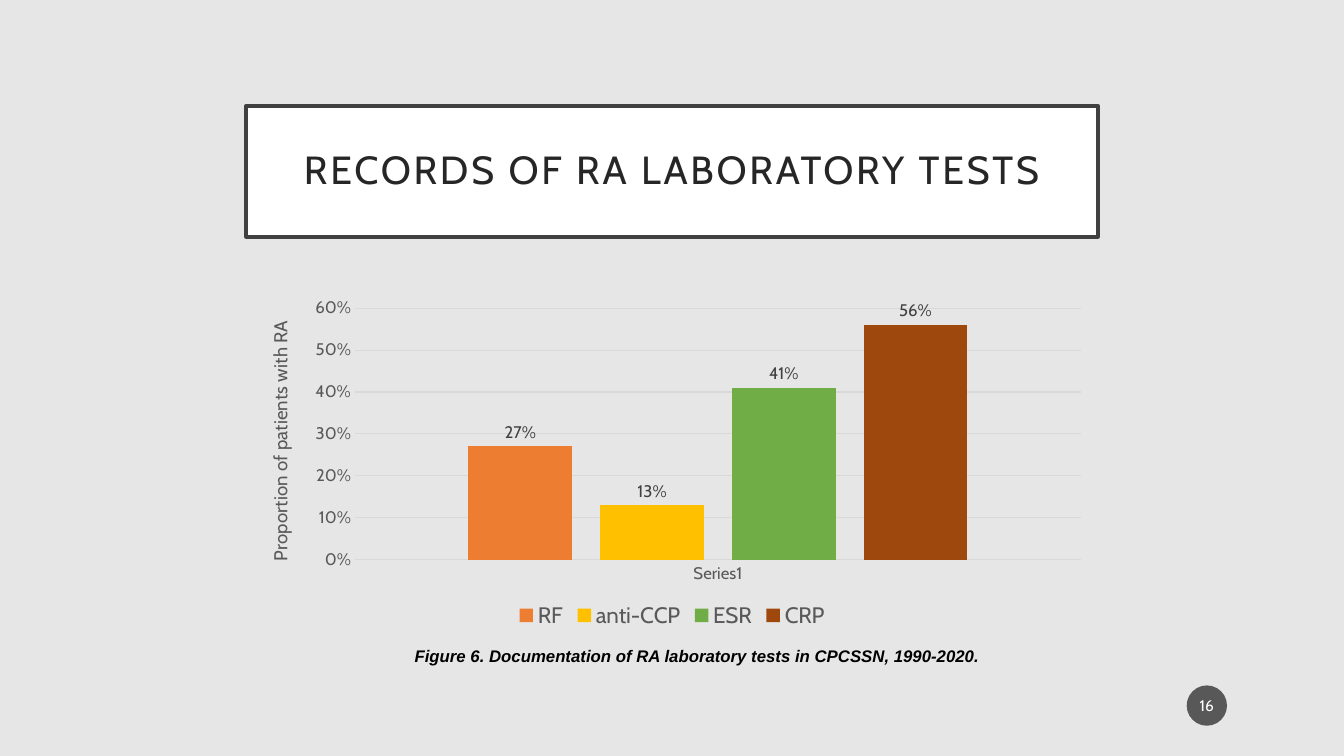
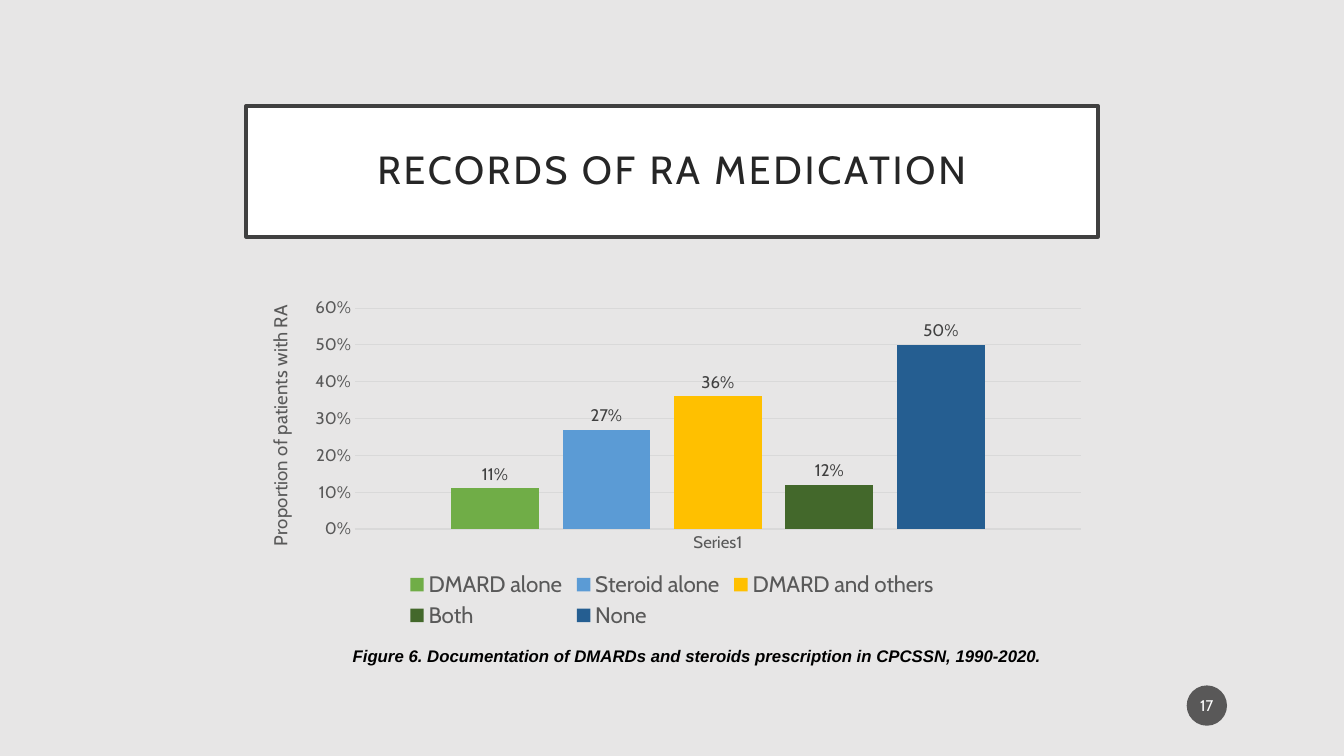
"""Build two slides on recorded laboratory tests and medication for RA."""
from dataclasses import dataclass

from lxml import etree
from pptx import Presentation
from pptx import util as u
from pptx.chart.data import CategoryChartData
from pptx.dml.color import RGBColor
from pptx.enum import chart as ch, shapes, text
from pptx.oxml.ns import qn


@dataclass(frozen=True)
class Theme:
    """Colours, fonts and type sizes shared by the slides."""

    background: str = "E7E6E6"
    white: str = "FFFFFF"
    black: str = "000000"
    frame: str = "404040"
    heading: str = "262626"
    muted: str = "595959"
    rule: str = "D9D9D9"
    badge: str = "1D1D1D"
    orange: str = "ED7D31"
    gold: str = "FFC000"
    green: str = "70AD47"
    brown: str = "9E480E"
    sky: str = "5B9BD5"
    forest: str = "43682B"
    navy: str = "255E91"
    font: str = "Cabin"
    caption_font: str = "Arial"
    title_size: float = 28
    legend_size: float = 16
    axis_title_size: float = 13.3
    small_size: float = 12
    badge_size: float = 11


THEME = Theme()
COLUMN_LEFT, COLUMN_WIDTH = 2.44, 8.45


def rgb(value):
    """Turn a hex string into a colour."""
    return RGBColor.from_string(value)


def place(shape, left, top, width, height):
    """Set the position and size of a shape in inches."""
    shape.left, shape.top = u.Inches(left), u.Inches(top)
    shape.width, shape.height = u.Inches(width), u.Inches(height)


def style_font(font, size, color, name=THEME.font, bold=False, italic=False):
    """Apply one set of type settings to a font."""
    font.name, font.size = name, u.Pt(size)
    font.bold, font.italic = bold, italic
    font.color.rgb = rgb(color)


def write(frame, content, *, line_spacing=None, tracking=0, indent=0,
          anchor=text.MSO_ANCHOR.TOP, insets=(0.1, 0.05), **font_format):
    """Fill a text frame with one centred, formatted paragraph."""
    frame.word_wrap = True
    frame.auto_size = text.MSO_AUTO_SIZE.NONE
    frame.vertical_anchor = anchor
    frame.margin_left = frame.margin_right = u.Inches(insets[0])
    frame.margin_top = frame.margin_bottom = u.Inches(insets[1])
    paragraph = frame.paragraphs[0]
    paragraph.alignment = text.PP_ALIGN.CENTER
    paragraph.line_spacing = line_spacing
    if indent:
        properties = paragraph._p.get_or_add_pPr()
        properties.set("marL", str(u.Inches(indent)))
        properties.set("indent", "0")
    run = paragraph.add_run()
    run.text = content
    style_font(run.font, **font_format)
    if tracking:
        run._r.get_or_add_rPr().set("spc", str(tracking * 100))


def add_title(slide, content):
    """Put the heading in a framed white band."""
    title = slide.shapes.title
    place(title, COLUMN_LEFT, 1.05, COLUMN_WIDTH, 1.3)
    title.fill.solid()
    title.fill.fore_color.rgb = rgb(THEME.white)
    title.line.color.rgb = rgb(THEME.frame)
    title.line.width = u.Pt(2.5)
    write(title.text_frame, content, size=THEME.title_size,
          color=THEME.heading, line_spacing=0.9, tracking=2,
          anchor=text.MSO_ANCHOR.MIDDLE, insets=(0.2, 0.2))


def add_page_badge(slide, number):
    """Show the page number in a translucent disc."""
    badge = slide.shapes.add_shape(
        shapes.MSO_SHAPE.OVAL, u.Inches(11.77), u.Inches(6.8),
        u.Inches(0.4), u.Inches(0.4))
    badge.shadow.inherit = False
    badge.fill.solid()
    badge.fill.fore_color.rgb = rgb(THEME.badge)
    badge.line.fill.background()
    fill_color = badge.element.spPr.find(f".//{qn('a:srgbClr')}")
    etree.SubElement(fill_color, qn("a:alpha")).set("val", "70000")
    write(badge.text_frame, str(number), size=THEME.badge_size,
          color=THEME.white, anchor=text.MSO_ANCHOR.MIDDLE,
          insets=(0.02, 0.05))


def add_caption(slide, content):
    """Add the figure caption below the chart."""
    caption = slide.shapes.add_textbox(
        u.Inches(1.85), u.Inches(6.26), u.Inches(9.63), u.Inches(0.37))
    write(caption.text_frame, content, size=THEME.small_size,
          color=THEME.black, name=THEME.caption_font, bold=True, italic=True,
          line_spacing=1.5, indent=0.5)


def style_axes(chart):
    """Format the category axis and the percentage axis."""
    groups, shares = chart.category_axis, chart.value_axis
    for axis in (groups, shares):
        axis.major_tick_mark = axis.minor_tick_mark = ch.XL_TICK_MARK.NONE
        style_font(axis.tick_labels.font, THEME.small_size, THEME.muted)
    shares.minimum_scale, shares.maximum_scale = 0, 0.6
    shares.major_unit = 0.1
    shares.tick_labels.number_format = "0%"
    shares.tick_labels.number_format_is_linked = False
    shares.format.line.fill.background()
    for line in (groups.format.line, shares.major_gridlines.format.line):
        line.color.rgb = rgb(THEME.rule)
        line.width = u.Pt(0.75)
    heading = shares.axis_title.text_frame.paragraphs[0].add_run()
    heading.text = "Proportion of patients with RA"
    style_font(heading.font, THEME.axis_title_size, THEME.muted)


def add_share_chart(slide, shares):
    """Draw one coloured column for each (name, share, colour)."""
    data = CategoryChartData(number_format="0%")
    data.categories = ["Series1"]
    for name, share, _ in shares:
        data.add_series(name, [share])
    chart = slide.shapes.add_chart(
        ch.XL_CHART_TYPE.COLUMN_CLUSTERED, u.Inches(COLUMN_LEFT),
        u.Inches(2.89), u.Inches(COLUMN_WIDTH), u.Inches(3.39), data).chart
    style_font(chart.font, 10, THEME.black)
    chart.has_title = False
    chart.has_legend = True
    chart.legend.position = ch.XL_LEGEND_POSITION.BOTTOM
    chart.legend.include_in_layout = False
    style_font(chart.legend.font, THEME.legend_size, THEME.muted)
    style_axes(chart)
    columns = chart.plots[0]
    columns.vary_by_categories = False
    columns.gap_width, columns.overlap = 219, -27
    for series, (_, _, color) in zip(columns.series, shares):
        series.format.fill.solid()
        series.format.fill.fore_color.rgb = rgb(color)
        labels = series.data_labels
        labels.show_value = True
        labels.position = ch.XL_LABEL_POSITION.OUTSIDE_END
        labels.number_format, labels.number_format_is_linked = "0%", False
        style_font(labels.font, THEME.small_size, THEME.frame)


def add_chart_slide(deck, number, title, shares, caption):
    """Add a slide with a heading, a chart, a caption and a page number."""
    slide = deck.slides.add_slide(deck.slide_layouts.get_by_name("Title Only"))
    add_title(slide, title)
    add_share_chart(slide, shares)
    add_page_badge(slide, number)
    add_caption(slide, caption)


def main():
    """Build and save the presentation."""
    deck = Presentation()
    deck.slide_width, deck.slide_height = u.Inches(13.33), u.Inches(7.5)
    backdrop = deck.slide_master.background.fill
    backdrop.solid()
    backdrop.fore_color.rgb = rgb(THEME.background)
    add_chart_slide(
        deck, 16, "RECORDS OF RA LABORATORY TESTS",
        [("RF", 0.27, THEME.orange),
         ("anti-CCP", 0.13, THEME.gold),
         ("ESR", 0.41, THEME.green),
         ("CRP", 0.56, THEME.brown)],
        "Figure 6. Documentation of RA laboratory tests in CPCSSN, 1990-2020.")
    add_chart_slide(
        deck, 17, "RECORDS OF RA MEDICATION",
        [("DMARD alone", 0.11, THEME.green),
         ("Steroid alone", 0.27, THEME.sky),
         ("DMARD and others", 0.36, THEME.gold),
         ("Both", 0.12, THEME.forest),
         ("None", 0.50, THEME.navy)],
        "Figure 6. Documentation of DMARDs and steroids prescription "
        "in CPCSSN, 1990-2020.")
    deck.save("out.pptx")


if __name__ == "__main__":
    main()
